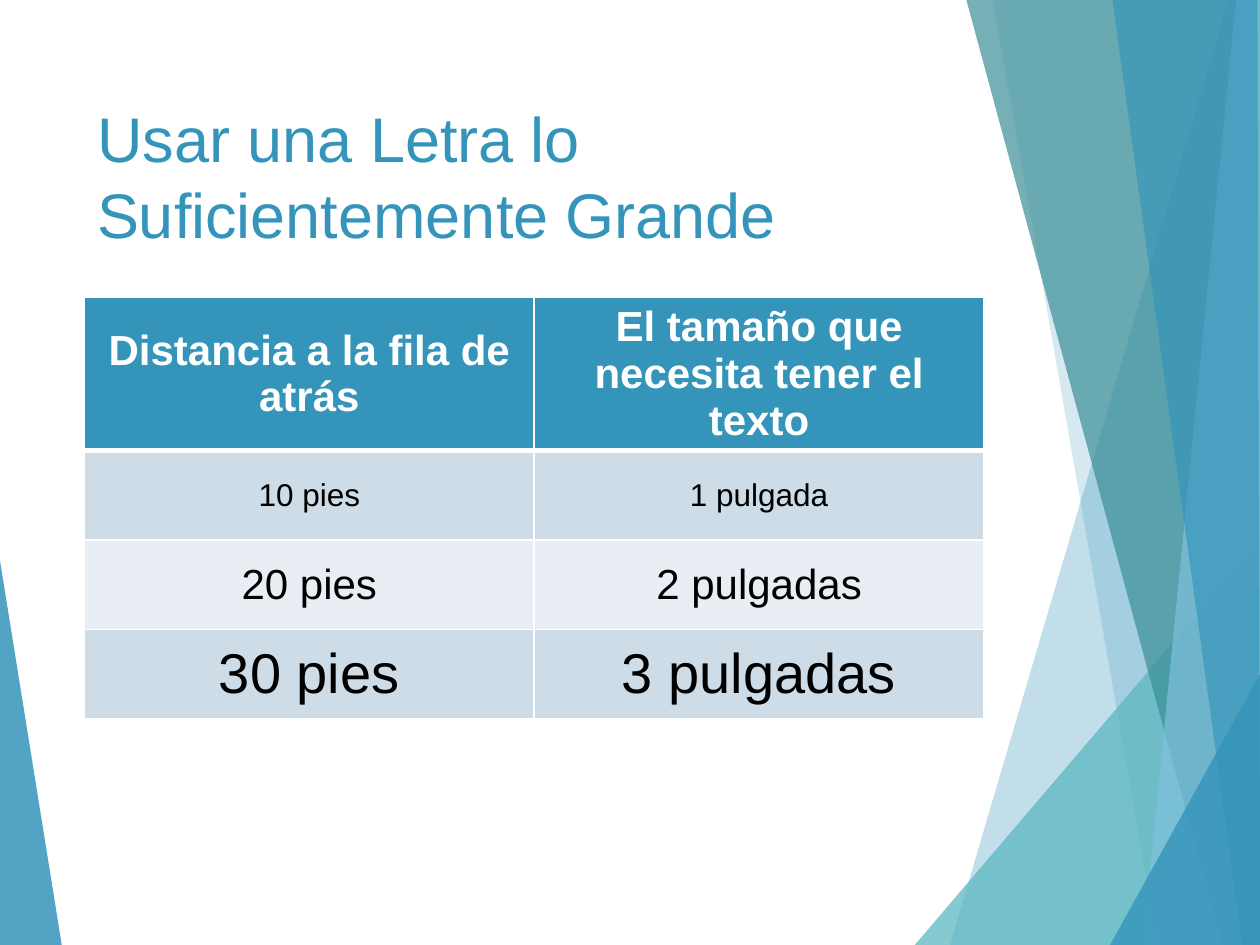
from pptx import Presentation, util as u
from pptx.dml.color import RGBColor
from pptx.enum import text
from pptx.oxml import ns
from lxml import etree

BLUE, TEAL, WHITE = "3494BA", "58B6C0", "FFFFFF"
FACETS = [
    ([(0, 4.45), (0.49, 7.5), (0, 7.5)], BLUE, 85),
    ([(9.75, 0), (7.54, 7.5), (10, 7.5), (10, 0)], BLUE, 30),
    ([(7.88, 0), (9.19, 7.5), (10, 7.5), (10, 0)], BLUE, 20),
    ([(7.26, 7.5), (10, 4.29), (10, 7.5)], TEAL, 72),
    ([(7.67, 0), (9.7, 7.5), (10, 7.5), (10, 0)], "3A8F98", 70),
    ([(9.81, 0), (9.07, 7.5), (10, 7.5), (10, 0)], "7FC1DB", 70),
    ([(8.83, 0), (9.86, 7.5), (10, 7.5), (9.98, 0)], BLUE, 65),
    ([(8.81, 7.5), (10, 5.35), (10, 7.5)], BLUE, 80),
]
ROWS = [
    ("Distancia a la fila de atrás", "El tamaño que necesita tener el texto"),
    ("10 pies", "1 pulgada"),
    ("20 pies", "2 pulgadas"),
    ("30 pies", "3 pulgadas"),
]
ROW_SIZES = [24, 18, 24, 32]
ROW_FILLS = [BLUE, "CEDCE7", "E8EEF3", "CEDCE7"]
ROW_HEIGHTS = [1.21, 0.71, 0.71, 0.71]


def paint(fill, color):
    """Give a fill a solid hex colour."""
    fill.solid()
    fill.fore_color.rgb = RGBColor.from_string(color)


def write(frame, words, size, color, bold=False, align=text.PP_ALIGN.LEFT):
    """Write one formatted, vertically centred paragraph."""
    frame.word_wrap = True
    frame.vertical_anchor = text.MSO_ANCHOR.MIDDLE
    para = frame.paragraphs[0]
    para.alignment = align
    span = para.add_run()
    span.text = words
    span.font.name = "Arial"
    span.font.size = u.Pt(size)
    span.font.bold = bold
    span.font.color.rgb = RGBColor.from_string(color)


def add_facet(page, points, color, opacity):
    """Draw one translucent polygon."""
    corners = [(u.Inches(x), u.Inches(y)) for x, y in points]
    builder = page.shapes.build_freeform(*corners[0], scale=1.0)
    builder.add_line_segments(corners[1:], close=True)
    facet = builder.convert_to_shape()
    facet.shadow.inherit = False
    facet.line.fill.background()
    paint(facet.fill, color)
    tint = facet._element.spPr.find(ns.qn("a:solidFill"))[0]
    etree.SubElement(tint, ns.qn("a:alpha"), val=str(opacity * 1000))


def add_title(page, left, top, width, height):
    """Place and format the slide title."""
    title = page.shapes.title
    title.left, title.top = u.Inches(left), u.Inches(top)
    title.width, title.height = u.Inches(width), u.Inches(height)
    title.text_frame.auto_size = text.MSO_AUTO_SIZE.NONE
    write(title.text_frame, "Usar una Letra lo Suficientemente Grande", 36, BLUE)


def add_borders(cell, widths):
    """Set white borders on a cell from a mapping of side to points."""
    props = cell._tc.get_or_add_tcPr()
    for index, (side, width) in enumerate(widths.items()):
        line = etree.Element(ns.qn(f"a:ln{side}"), w=str(u.Pt(width)))
        solid = etree.SubElement(line, ns.qn("a:solidFill"))
        etree.SubElement(solid, ns.qn("a:srgbClr"), val=WHITE)
        props.insert(index, line)


def add_size_table(page, left, top, width):
    """Build the table of viewing distances and text sizes."""
    frame = page.shapes.add_table(
        len(ROWS), len(ROWS[0]), u.Inches(left), u.Inches(top),
        u.Inches(width), u.Inches(sum(ROW_HEIGHTS)))
    table = frame.table
    for column in table.columns:
        column.width = u.Inches(width / len(ROWS[0]))
    for index, row in enumerate(ROWS):
        header = index == 0
        table.rows[index].height = u.Inches(ROW_HEIGHTS[index])
        for cell, words in zip(table.rows[index].cells, row):
            cell.vertical_anchor = text.MSO_ANCHOR.MIDDLE
            write(cell.text_frame, words, ROW_SIZES[index],
                  WHITE if header else "000000", header, text.PP_ALIGN.CENTER)
            cell.vertical_anchor = text.MSO_ANCHOR.MIDDLE
            paint(cell.fill, ROW_FILLS[index])
            add_borders(cell, {"L": 1, "R": 1, "T": 3 if index == 1 else 1,
                               "B": 3 if header else 1})


def main():
    """Build and save the slide."""
    deck = Presentation()
    deck.slide_width, deck.slide_height = u.Inches(10), u.Inches(7.5)
    page = deck.slides.add_slide(deck.slide_layouts[5])
    for facet in FACETS:
        add_facet(page, *facet)
    add_title(page, 0.67, 0.67, 6.94, 1.44)
    add_size_table(page, 0.67, 2.36, 7.14)
    deck.save("out.pptx")


if __name__ == "__main__":
    main()
